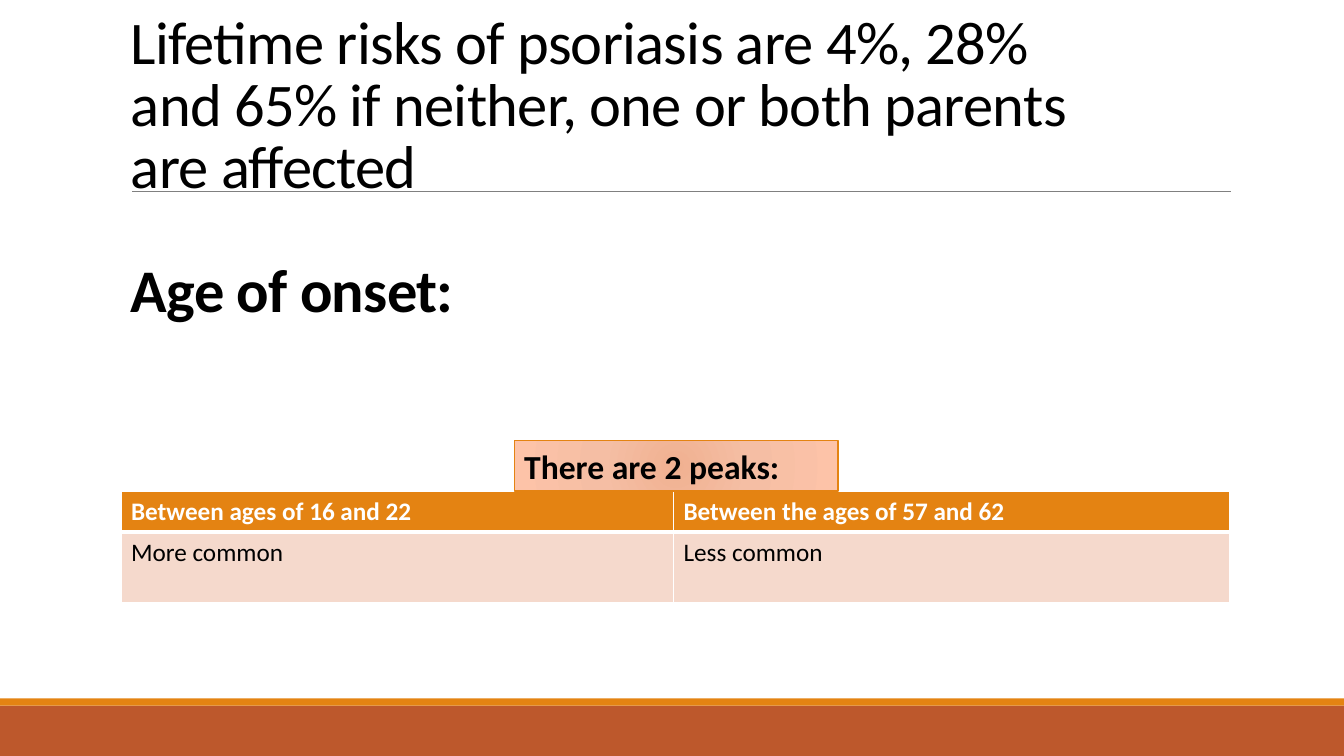
from lxml import etree
from pptx import Presentation
from pptx.dml.color import RGBColor
from pptx.enum.shapes import MSO_CONNECTOR, MSO_SHAPE
from pptx.enum.text import MSO_ANCHOR
from pptx.oxml import parse_xml
from pptx.oxml.ns import nsdecls, qn
from pptx.util import Inches, Pt

RECTANGLE = MSO_SHAPE.RECTANGLE
STRAIGHT = MSO_CONNECTOR.STRAIGHT
BOTTOM = MSO_ANCHOR.BOTTOM

COLOURS = {
    "rust": "BD582C",
    "orange": "E48312",
    "grey": "808080",
    "black": "000000",
    "white": "FFFFFF",
    "blush": "F5D9CC",
}
PEAK_STOPS = [(0, "F0B191"), (45, "F5BEA4"), (100, "FDC3A8")]


def colour(name):
    return RGBColor.from_string(COLOURS[name])


class SlideBuilder:
    font_name = "Calibri"

    def __init__(self, slide):
        self.slide = slide

    def style(self, paragraph, size, colour_name, bold=False, spacing=0):
        for run in paragraph.runs:
            run.font.name = self.font_name
            run.font.size = Pt(size)
            run.font.bold = bold
            run.font.color.rgb = colour(colour_name)
            if spacing:
                run.font._element.set("spc", str(round(spacing * 100)))

    def rectangle(self, left, top, width, height, fill_name):
        shape = self.slide.shapes.add_shape(
            RECTANGLE, Inches(left), Inches(top), Inches(width), Inches(height))
        shape.shadow.inherit = False
        shape.fill.solid()
        shape.fill.fore_color.rgb = colour(fill_name)
        shape.line.fill.background()
        return shape

    def rule(self, left, right, top):
        connector = self.slide.shapes.add_connector(
            STRAIGHT, Inches(left), Inches(top), Inches(right), Inches(top))
        connector.line.color.rgb = colour("grey")
        connector.line.width = Pt(0.5)
        etree.SubElement(connector._element.spPr, qn("a:effectLst"))

    def title(self, left, top, width, height, statement, heading):
        shape = self.slide.shapes.add_textbox(
            Inches(left), Inches(top), Inches(width), Inches(height))
        text_frame = shape.text_frame
        text_frame.word_wrap = True
        text_frame.vertical_anchor = BOTTOM
        text_frame.text = f"{statement}\n{heading}"
        for paragraph, bold in zip(text_frame.paragraphs, (False, True)):
            paragraph.line_spacing = 0.85
            self.style(paragraph, 43.2, "black", bold, -0.5)
        text_frame.paragraphs[1].space_before = Pt(44.5)

    def radial_label(self, left, top, width, height, text, stops):
        shape = self.rectangle(left, top, width, height, "white")
        stop_xml = "".join(
            f'<a:gs pos="{position * 1000}"><a:srgbClr val="{value}"/></a:gs>'
            for position, value in stops)
        gradient = parse_xml(
            f'<a:gradFill {nsdecls("a")}><a:gsLst>{stop_xml}</a:gsLst>'
            '<a:path path="circle"><a:fillToRect l="100000" t="100000" '
            'r="100000" b="100000"/></a:path></a:gradFill>')
        properties = shape._element.spPr
        properties.replace(properties.find(qn("a:solidFill")), gradient)
        shape.line.color.rgb = colour("orange")
        shape.line.width = Pt(1)
        shape.text_frame.text = text
        paragraph = shape.text_frame.paragraphs[0]
        paragraph.alignment = 1
        self.style(paragraph, 24, "black", True)

    def border(self, cell, bottom_width):
        properties = cell._tc.get_or_add_tcPr()
        for side, width in (("L", 1), ("R", 1), ("T", 1), ("B", bottom_width)):
            properties.append(parse_xml(
                f'<a:ln{side} {nsdecls("a")} w="{Pt(width)}"><a:solidFill>'
                f'<a:srgbClr val="{COLOURS["white"]}"/></a:solidFill></a:ln{side}>'))

    def table(self, left, top, column_widths, row_heights, rows):
        frame = self.slide.shapes.add_table(
            len(rows), len(column_widths), Inches(left), Inches(top),
            Inches(sum(column_widths)), Inches(sum(row_heights)))
        table = frame.table
        for column, width in zip(table.columns, column_widths):
            column.width = Inches(width)
        for row_index, (row, height, texts) in enumerate(
                zip(table.rows, row_heights, rows)):
            row.height = Inches(height)
            header = row_index == 0
            for cell, text in zip(row.cells, texts):
                self.border(cell, 3 if header else 1)
                cell.fill.solid()
                cell.fill.fore_color.rgb = colour("orange" if header else "blush")
                cell.text_frame.text = text
                self.style(cell.text_frame.paragraphs[0], 18,
                           "white" if header else "black", header)


def main():
    presentation = Presentation()
    presentation.slide_width = Inches(13.33)
    presentation.slide_height = Inches(7.5)
    builder = SlideBuilder(
        presentation.slides.add_slide(presentation.slide_layouts[6]))

    builder.rectangle(0, 7, 13.33, 0.5, "rust")
    builder.rectangle(0, 6.93, 13.33, 0.07, "orange")
    builder.rule(1.31, 12.21, 1.9)
    builder.title(
        1.2, 0.21, 9.76, 3.06,
        "Lifetime risks of psoriasis are 4%, 28% and 65% if neither, "
        "one or both parents are affected",
        "Age of onset:")
    builder.table(1.2, 4.88, [5.48, 5.52], [0.4, 0.7], [
        ["Between ages of 16 and 22", "Between the ages of 57 and 62"],
        ["More common", "Less common"],
    ])
    builder.radial_label(5.1, 4.37, 3.21, 0.5, "There are 2 peaks:", PEAK_STOPS)
    presentation.save("out.pptx")


if __name__ == "__main__":
    main()
